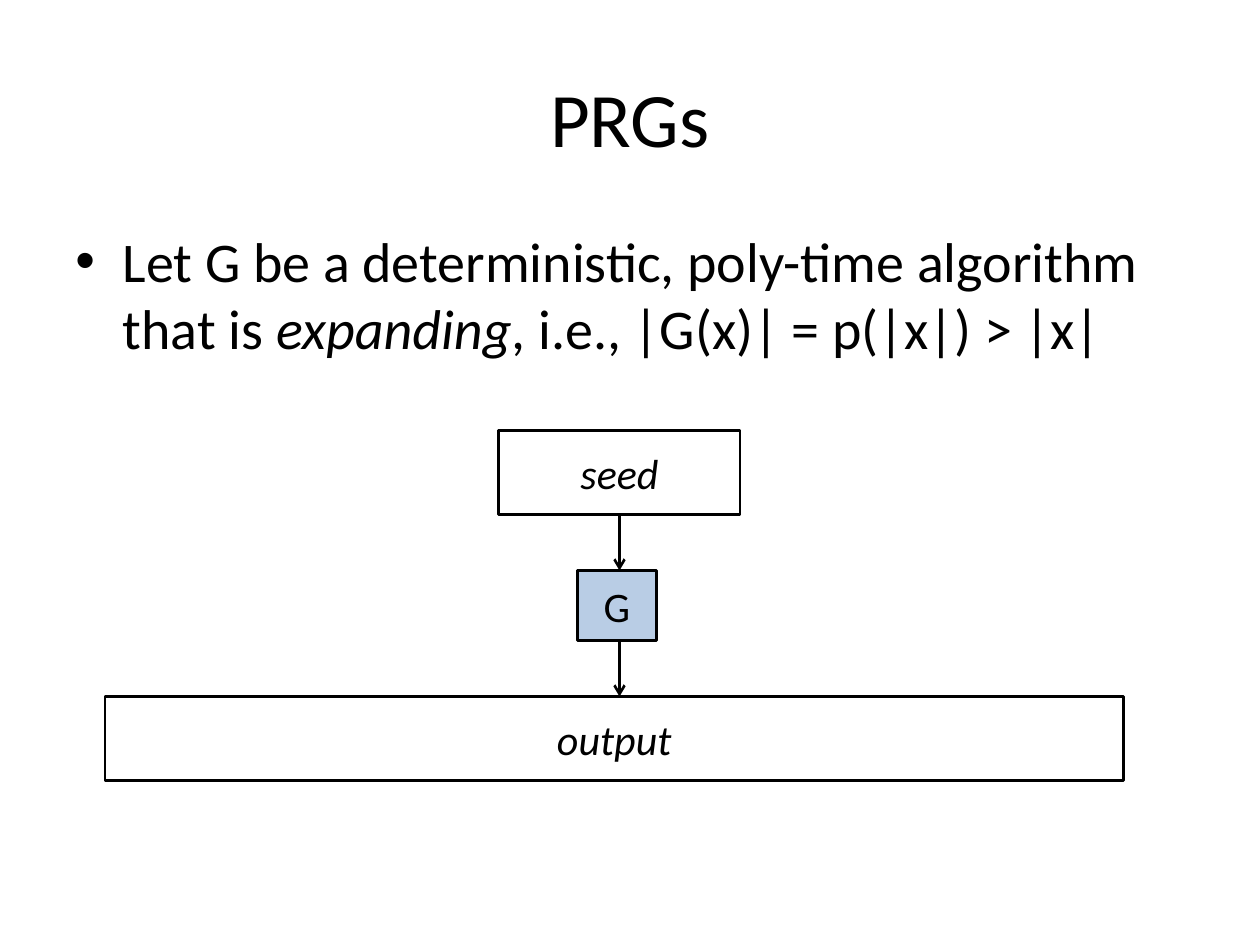
from dataclasses import dataclass

from lxml.etree import SubElement
from pptx import Presentation
from pptx.dml.color import RGBColor
from pptx.enum.shapes import MSO_CONNECTOR, MSO_SHAPE
from pptx.enum.text import MSO_ANCHOR, PP_ALIGN
from pptx.oxml.ns import qn
from pptx.util import Pt


@dataclass(frozen=True)
class Theme:
    font: str = "Calibri"
    ink: RGBColor = RGBColor(0x00, 0x00, 0x00)
    blue: RGBColor = RGBColor(0xB9, 0xCD, 0xE5)
    title: int = 44
    body: int = 32
    label: int = 24
    line: float = 1.5


THEME = Theme()


def add_run(para, text, size, slant=False):
    run = para.add_run()
    run.text = text
    font = run.font
    font.name = THEME.font
    font.size = Pt(size)
    font.color.rgb = THEME.ink
    font.italic = slant


def add_text(slide, top, height, anchor):
    box = slide.shapes.add_textbox(Pt(36), Pt(top), Pt(648), Pt(height))
    frame = box.text_frame
    frame.word_wrap = True
    frame.vertical_anchor = anchor
    return frame.paragraphs[0]


def add_bullet(para, indent):
    props = para._p.get_or_add_pPr()
    props.set("marL", str(Pt(indent)))
    props.set("indent", str(-Pt(indent)))
    SubElement(props, qn("a:buFont")).set("typeface", "Arial")
    SubElement(props, qn("a:buChar")).set("char", "•")


def add_box(slide, text, left, top, width, height, fill=None, slant=True):
    box = slide.shapes.add_shape(
        MSO_SHAPE.RECTANGLE, Pt(left), Pt(top), Pt(width), Pt(height))
    box.shadow.inherit = False
    if fill is None:
        box.fill.background()
    else:
        box.fill.solid()
        box.fill.fore_color.rgb = fill
    box.line.color.rgb = THEME.ink
    box.line.width = Pt(THEME.line)
    box.text_frame.vertical_anchor = MSO_ANCHOR.MIDDLE
    para = box.text_frame.paragraphs[0]
    para.alignment = PP_ALIGN.CENTER
    add_run(para, text, THEME.label, slant)
    return box


def add_arrow(slide, x, upper, lower):
    arrow = slide.shapes.add_connector(
        MSO_CONNECTOR.STRAIGHT, Pt(x), upper.top + upper.height, Pt(x), lower.top)
    arrow.line.color.rgb = THEME.ink
    arrow.line.width = Pt(THEME.line)
    SubElement(arrow.line._get_or_add_ln(), qn("a:tailEnd")).set("type", "arrow")
    SubElement(arrow._element.spPr, qn("a:effectLst"))
    return arrow


def main():
    deck = Presentation()
    deck.slide_width, deck.slide_height = Pt(720), Pt(540)
    slide = deck.slides.add_slide(deck.slide_layouts[6])

    title = add_text(slide, 21.6, 90, MSO_ANCHOR.MIDDLE)
    title.alignment = PP_ALIGN.CENTER
    add_run(title, "PRGs", THEME.title)

    body = add_text(slide, 126, 356.4, MSO_ANCHOR.TOP)
    add_bullet(body, 27)
    add_run(body, "Let G be a deterministic, poly-time algorithm that is ", THEME.body)
    add_run(body, "expanding", THEME.body, slant=True)
    add_run(body, ", i.e., |G(x)| = p(|x|) > |x|", THEME.body)

    seed = add_box(slide, "seed", 285, 246, 138, 48)
    gen = add_box(slide, "G", 330, 326, 45, 40, THEME.blue, slant=False)
    output = add_box(slide, "output", 60, 398, 582, 48)

    add_arrow(slide, 354, seed, gen).begin_connect(seed, 2)
    add_arrow(slide, 354, gen, output)

    deck.save("out.pptx")


if __name__ == "__main__":
    main()
